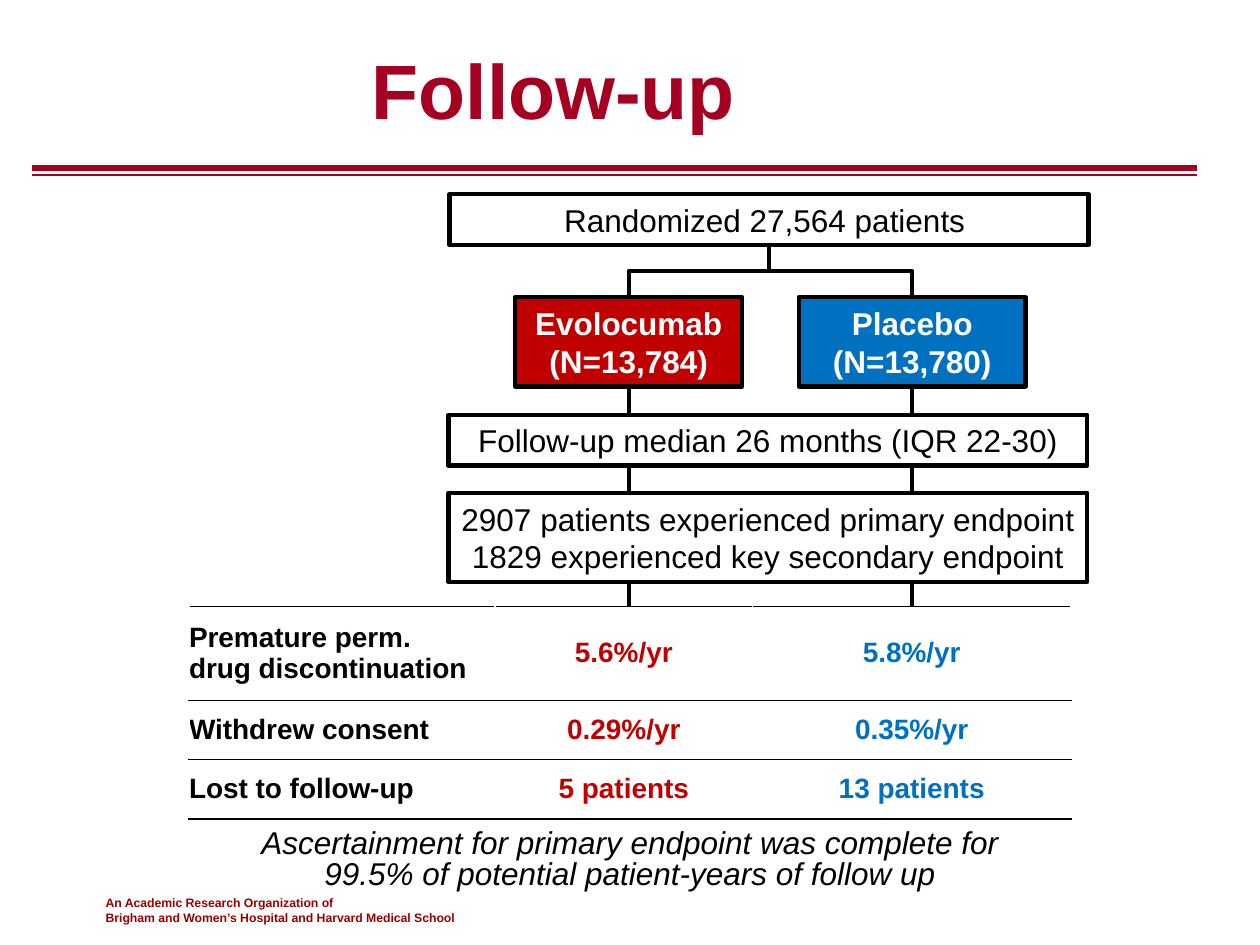
from dataclasses import dataclass, field
from typing import Optional

import pptx
import pptx.dml.color
import pptx.enum.shapes
import pptx.enum.text
import pptx.oxml.ns
import pptx.util
from lxml import etree

Pt = pptx.util.Pt
RGBColor = pptx.dml.color.RGBColor
Align = pptx.enum.text.PP_ALIGN
Anchor = pptx.enum.text.MSO_ANCHOR
Connector = pptx.enum.shapes.MSO_CONNECTOR
qn = pptx.oxml.ns.qn

BLACK = RGBColor(0x00, 0x00, 0x00)
WHITE = RGBColor(0xFF, 0xFF, 0xFF)
CRIMSON = RGBColor(0xA5, 0x00, 0x21)
MAROON = RGBColor(0x99, 0x00, 0x00)
RED = RGBColor(0xC0, 0x00, 0x00)
BLUE = RGBColor(0x00, 0x70, 0xC0)

BOTTOM, TOP = 2, 0
FLOW_LINE = 2.5
TABLE_TOP = 346.5


@dataclass
class Label:
    """Paragraphs of text with one format."""
    lines: list[str]
    color: RGBColor = BLACK
    font: dict = field(default_factory=lambda: {"size": Pt(18)})
    para: dict = field(default_factory=lambda: {"alignment": Align.CENTER})


@dataclass
class Box:
    """A flow chart box or a text box, in points."""
    left: float
    top: float
    width: float
    height: float
    label: Label
    fill: Optional[RGBColor] = None
    anchor: Anchor = Anchor.TOP


def write(tf, label: Label) -> None:
    """Fill a text frame with the paragraphs of a label."""
    for i, line in enumerate(label.lines):
        p = tf.paragraphs[0] if i == 0 else tf.add_paragraph()
        p.text = line
        for name, value in label.para.items():
            setattr(p, name, value)
        for r in p.runs:
            for name, value in {"name": "Arial", **label.font}.items():
                setattr(r.font, name, value)
            r.font.color.rgb = label.color


def add_text(s, box: Box):
    """Add a text box."""
    sp = s.shapes.add_textbox(*map(Pt, (box.left, box.top, box.width, box.height)))
    sp.text_frame.word_wrap = True
    sp.text_frame.vertical_anchor = box.anchor
    write(sp.text_frame, box.label)
    return sp


def add_box(s, box: Box):
    """Add an outlined flow chart box."""
    sp = s.shapes.add_shape(pptx.enum.shapes.MSO_SHAPE.RECTANGLE,
                            *map(Pt, (box.left, box.top, box.width, box.height)))
    sp.shadow.inherit = False
    if box.fill is None:
        sp.fill.background()
    else:
        sp.fill.solid()
        sp.fill.fore_color.rgb = box.fill
    sp.line.color.rgb = BLACK
    sp.line.width = Pt(FLOW_LINE)
    tf = sp.text_frame
    settings = {"word_wrap": True, "vertical_anchor": Anchor.MIDDLE,
                "margin_left": Pt(3.6), "margin_right": Pt(3.6)}
    for name, value in settings.items():
        setattr(tf, name, value)
    write(tf, box.label)
    return sp


def add_line(s, kind, x1: float, y1: float, x2: float, y2: float,
             color: RGBColor = BLACK, width: float = FLOW_LINE):
    """Add a connector without a shadow."""
    line = s.shapes.add_connector(kind, *map(Pt, (x1, y1, x2, y2)))
    line.line.color.rgb = color
    line.line.width = Pt(width)
    etree.SubElement(line._element.spPr, qn("a:effectLst"))
    return line


def add_branch(s, parent, child) -> None:
    """Join two boxes by an elbow that leaves downwards."""
    line = add_line(s, Connector.ELBOW, 0, 0, 1, 1)
    line.begin_connect(parent, BOTTOM)
    line.end_connect(child, TOP)
    x1, y1, x2, y2 = line.begin_x, line.begin_y, line.end_x, line.end_y
    to_right = x2 > x1
    width, height = y2 - y1, abs(x2 - x1)
    place = {"left": (x1 + x2 - width) // 2, "top": (y1 + y2 - height) // 2,
             "width": width, "height": height}
    for name, value in place.items():
        setattr(line, name, value)
    xfrm = line._element.spPr.find(qn("a:xfrm"))
    xfrm.set("rot", str((270 if to_right else 90) * 60000))
    xfrm.set("flipH", str(int(to_right)))


def set_borders(cell, borders: dict[str, tuple[RGBColor, float]]) -> None:
    """Draw the borders of a table cell."""
    tc_pr = cell._tc.get_or_add_tcPr()
    for side, (color, width) in borders.items():
        ln = etree.SubElement(tc_pr, qn(f"a:{side}"), w=str(int(Pt(width))))
        fill = etree.SubElement(ln, qn("a:solidFill"))
        etree.SubElement(fill, qn("a:srgbClr"), val=str(color))


def add_outcomes(s, rows: list[tuple[str, str, str]]) -> None:
    """Add the table of outcomes by arm."""
    widths, heights = (175, 147, 182), (53.5, 34, 34)
    table = s.shapes.add_table(len(rows), len(widths), Pt(108), Pt(TABLE_TOP),
                               Pt(sum(widths)), Pt(sum(heights))).table
    table.first_row = table.horz_banding = False
    for column, width in zip(table.columns, widths):
        column.width = Pt(width)
    for i, texts in enumerate(rows):
        table.rows[i].height = Pt(heights[i])
        for j, (text, color) in enumerate(zip(texts, (BLACK, RED, BLUE))):
            cell = table.cell(i, j)
            cell.vertical_anchor = Anchor.MIDDLE
            if j == 0:
                cell.margin_left = cell.margin_right = 0
            set_borders(cell, {
                "lnL": (WHITE, 1), "lnR": (WHITE, 1),
                "lnT": (BLACK, 1 if i == 0 else 0.5),
                "lnB": (BLACK, 1 if i == len(rows) - 1 else 0.5)})
            cell.fill.background()
            align = Align.CENTER if j else Align.LEFT
            write(cell.text_frame, Label([text], color, {"size": Pt(16), "bold": True},
                                         {"alignment": align}))


def main() -> None:
    """Build the follow-up slide."""
    prs = pptx.Presentation()
    prs.slide_width, prs.slide_height = Pt(720), Pt(540)
    s = prs.slides.add_slide(prs.slide_layouts[6])

    add_text(s, Box(53.3, 508.3, 311.8, 23.8, Label(
        ["An Academic Research Organization of",
         "Brigham and Women’s Hospital and Harvard Medical School"],
        MAROON, {"size": Pt(7), "bold": True}, {"alignment": Align.LEFT})))
    for y, width in ((96, 3), (100, 1.5)):
        add_line(s, Connector.STRAIGHT, 18, y, 684, y, CRIMSON, width)
    add_text(s, Box(59.8, 5.8, 513.4, 90, Label(
        ["Follow-up"], CRIMSON, {"size": Pt(44), "bold": True}), anchor=Anchor.MIDDLE))

    randomized = add_box(s, Box(257, 110.9, 365, 29.1, Label(["Randomized 27,564 patients "])))
    arms = [(["Evolocumab\n(N=13,784)"], RED), (["Placebo", "(N=13,780)"], BLUE)]
    for i, (lines, fill) in enumerate(arms):
        label = Label(lines, WHITE, {"size": Pt(18), "bold": True})
        arm = add_box(s, Box(294.5 + 162 * i, 169.8, 129.6, 51, label, fill))
        add_branch(s, randomized, arm)
        x = (arm.left + arm.width / 2) / Pt(1)
        stem = add_line(s, Connector.STRAIGHT, x, 220.8, x, TABLE_TOP)
        stem.begin_connect(arm, BOTTOM)

    add_outcomes(s, [("Premature perm.\ndrug discontinuation", "5.6%/yr", "5.8%/yr"),
                     ("Withdrew consent", "0.29%/yr", "0.35%/yr"),
                     ("Lost to follow-up", "5 patients", "13 patients")])
    for top, height, lines in (
            (237, 29.1, ["Follow-up median 26 months (IQR 22-30)"]),
            (281.6, 51, ["2907 patients experienced primary endpoint",
                         "1829 experienced key secondary endpoint"])):
        add_box(s, Box(256.3, top, 365, height, Label(lines), WHITE))
    add_text(s, Box(108, 470.2, 504, 43.9, Label(
        ["Ascertainment for primary endpoint was complete for\n"
         "99.5% of potential patient-years of follow up"],
        font={"size": Pt(18), "italic": True},
        para={"alignment": Align.CENTER, "line_spacing": Pt(18)})))
    prs.save("out.pptx")


if __name__ == "__main__":
    main()
